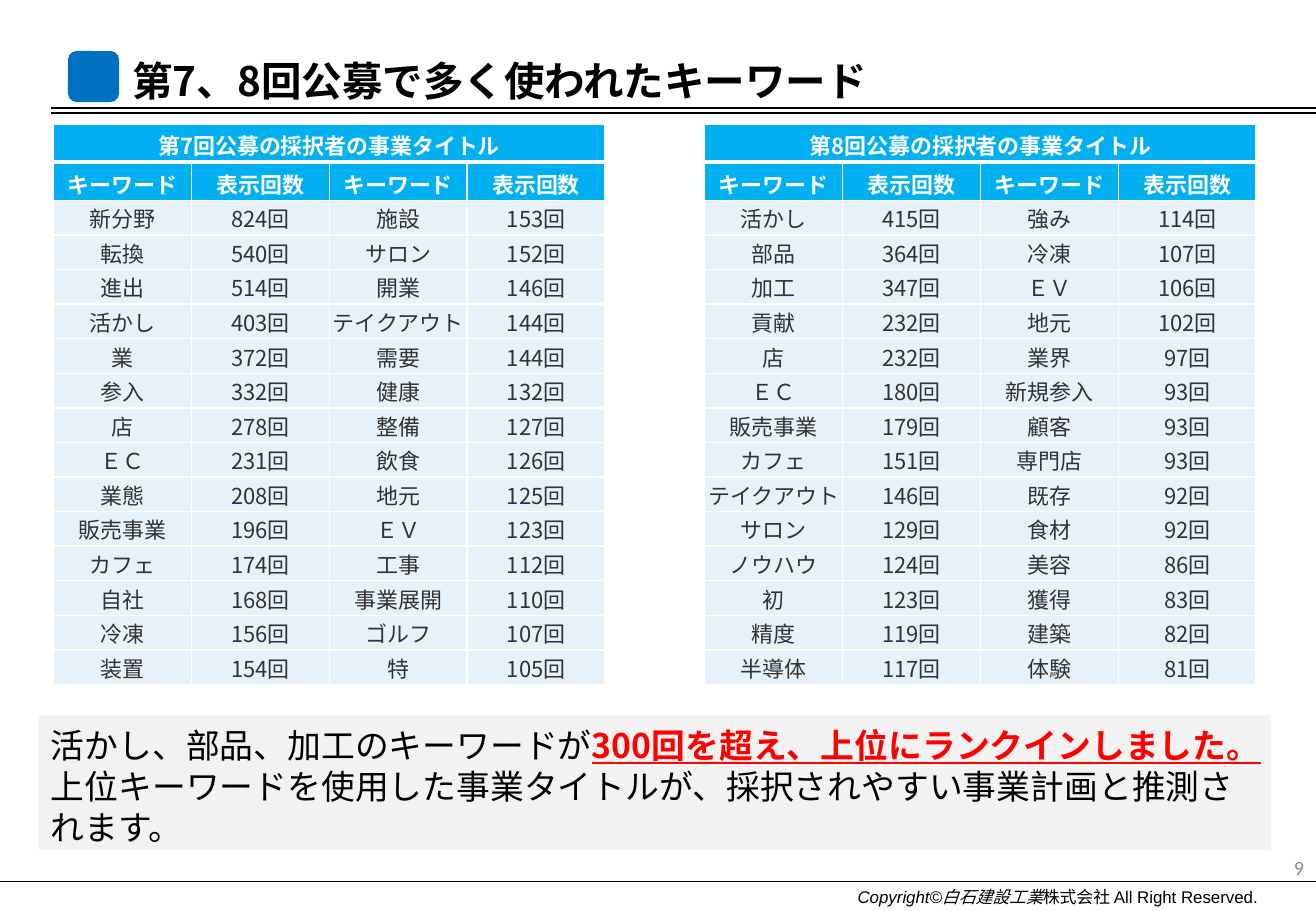
from lxml.etree import SubElement
from pptx import Presentation
from pptx.dml.color import RGBColor
from pptx.enum.shapes import MSO_CONNECTOR, MSO_SHAPE
from pptx.enum.text import MSO_ANCHOR, MSO_AUTO_SIZE, PP_ALIGN
from pptx.oxml import parse_xml
from pptx.oxml.ns import nsdecls, qn
from pptx.util import Pt

PX = 4572  # 200 px to the inch
SLIDE_W, SLIDE_H = 2166, 1500
GOTHIC = "Noto Sans CJK JP"
COLORS = {
    "black": "000000", "white": "FFFFFF", "marker": "0070C0", "header": "00B0F0",
    "body": "E7F1FA", "body_text": "333333", "summary": "F2F2F2",
    "emphasis": "FF0000", "page": "8C8C8C",
}

HEADINGS = ["キーワード", "表示回数"] * 2
ROUNDS = {
    "第7回公募の採択者の事業タイトル": [
        ("新分野", 824), ("転換", 540), ("進出", 514), ("活かし", 403), ("業", 372),
        ("参入", 332), ("店", 278), ("ＥＣ", 231), ("業態", 208), ("販売事業", 196),
        ("カフェ", 174), ("自社", 168), ("冷凍", 156), ("装置", 154),
        ("施設", 153), ("サロン", 152), ("開業", 146), ("テイクアウト", 144),
        ("需要", 144), ("健康", 132), ("整備", 127), ("飲食", 126), ("地元", 125),
        ("ＥＶ", 123), ("工事", 112), ("事業展開", 110), ("ゴルフ", 107), ("特", 105),
    ],
    "第8回公募の採択者の事業タイトル": [
        ("活かし", 415), ("部品", 364), ("加工", 347), ("貢献", 232), ("店", 232),
        ("ＥＣ", 180), ("販売事業", 179), ("カフェ", 151), ("テイクアウト", 146),
        ("サロン", 129), ("ノウハウ", 124), ("初", 123), ("精度", 119), ("半導体", 117),
        ("強み", 114), ("冷凍", 107), ("ＥＶ", 106), ("地元", 102), ("業界", 97),
        ("新規参入", 93), ("顧客", 93), ("専門店", 93), ("既存", 92), ("食材", 92),
        ("美容", 86), ("獲得", 83), ("建築", 82), ("体験", 81),
    ],
}
SUMMARY = [
    [("活かし、部品、加工のキーワードが", False),
     ("300回を超え、上位にランクインしました。", True)],
    [("上位キーワードを使用した事業タイトルが、採択されやすい事業計画と推測されます。", False)],
]


def color(name):
    return RGBColor.from_string(COLORS[name])


def emu(*lengths):
    return [length * PX for length in lengths]


def style(run, size, ink, latin=GOTHIC, bold=False, italic=False):
    font = run.font
    font.size, font.bold, font.italic, font.name = Pt(size), bold, italic, latin
    font.color.rgb = color(ink)
    SubElement(run._r.get_or_add_rPr(), qn("a:ea"), typeface=GOTHIC)


def add_rule(slide, x, y, width):
    rule = slide.shapes.add_connector(
        MSO_CONNECTOR.STRAIGHT, *emu(x, y, x + width, y))
    rule.line.color.rgb = color("black")
    rule.line.width = Pt(0.75)
    SubElement(rule._element.spPr, qn("a:effectLst"))


def add_block(slide, kind, box, fill):
    block = slide.shapes.add_shape(kind, *emu(*box))
    block.shadow.inherit = False
    block.fill.solid()
    block.fill.fore_color.rgb = color(fill)
    block.line.fill.background()
    return block


def add_heading(slide, x, y, width, height):
    # Double rule and marker
    for rule_y in (y + 96, y + 104):
        add_rule(slide, x, rule_y, width)
    add_block(slide, MSO_SHAPE.ROUNDED_RECTANGLE, (x + 28, y + 2, 84, 84), "marker")
    # Title
    title = slide.shapes.title
    title.left, title.top, title.width, title.height = emu(x + 114, y, 1400, height)
    frame = title.text_frame
    frame.text = "第7、8回公募で多く使われたキーワード"
    frame.auto_size = MSO_AUTO_SIZE.NONE
    frame.vertical_anchor = MSO_ANCHOR.MIDDLE
    frame.paragraphs[0].alignment = PP_ALIGN.LEFT
    style(frame.paragraphs[0].runs[0], 24, "black", bold=True)


def set_borders(cell, bottom):
    tc_pr = cell._tc.get_or_add_tcPr()
    for i, side in enumerate("LRTB"):
        width = Pt(bottom if side == "B" else 1)
        tc_pr.insert(i, parse_xml(
            f'<a:ln{side} {nsdecls("a")} w="{width}"><a:solidFill>'
            f'<a:srgbClr val="{COLORS["white"]}"/></a:solidFill></a:ln{side}>'))


def format_cell(cell, text, row, filled):
    is_header = row < 2
    cell.text = text
    cell.vertical_anchor = MSO_ANCHOR.MIDDLE
    cell.margin_left, cell.margin_right, cell.margin_top, cell.margin_bottom = emu(
        2, 2, 8 if is_header else 2, 0)
    if filled:
        cell.fill.solid()
        cell.fill.fore_color.rgb = color("header" if is_header else "body")
    else:
        cell.fill.background()
    set_borders(cell, 3 if row == 0 else 1)
    paragraph = cell.text_frame.paragraphs[0]
    paragraph.alignment = PP_ALIGN.CENTER
    if text:
        style(paragraph.runs[0], 13, "white" if is_header else "body_text", bold=is_header)
    else:
        SubElement(paragraph._p, qn("a:endParaRPr"), sz="800")


def keyword_rows():
    halves = []
    for name, counts in ROUNDS.items():
        half = len(counts) // 2
        pairs = zip(counts[:half], counts[half:])
        halves.append([[name, "", "", ""], HEADINGS] + [
            [left, f"{n}回", right, f"{m}回"] for (left, n), (right, m) in pairs])
    return [left + [""] + right for left, right in zip(*halves)]


def add_keyword_table(slide, x, y, width, height):
    rows, gap, header_height = keyword_rows(), 164, 63
    table = slide.shapes.add_table(len(rows), 9, *emu(x, y, width, height)).table
    table.first_row = table.horz_banding = False
    for i, column in enumerate(table.columns):
        column.width = PX * (gap if i == 4 else (width - gap) // 8)
    body_height = (height - 2 * header_height) // (len(rows) - 2)
    for r, texts in enumerate(rows):
        table.rows[r].height = PX * (header_height if r < 2 else body_height)
        for c, text in enumerate(texts):
            format_cell(table.cell(r, c), text, r, filled=c != 4)
    for first in (0, 5):
        table.cell(0, first).merge(table.cell(0, first + 3))


def add_summary(slide, *box):
    frame = add_block(slide, MSO_SHAPE.RECTANGLE, box, "summary").text_frame
    frame.word_wrap = True
    frame.vertical_anchor = MSO_ANCHOR.TOP
    frame.margin_left, frame.margin_right, frame.margin_top, frame.margin_bottom = emu(
        20, 16, 14, 6)
    for i, parts in enumerate(SUMMARY):
        paragraph = frame.add_paragraph() if i else frame.paragraphs[0]
        paragraph.alignment = PP_ALIGN.LEFT
        paragraph.line_spacing = Pt(24.3)
        for text, emphasized in parts:
            run = paragraph.add_run()
            run.text = text
            style(run, 20, "emphasis" if emphasized else "black", bold=emphasized)
            run.font.underline = emphasized


def add_label(slide, box, align):
    frame = slide.shapes.add_textbox(*emu(*box)).text_frame
    frame.word_wrap = True
    frame.vertical_anchor = MSO_ANCHOR.MIDDLE
    frame.paragraphs[0].alignment = align
    return frame.paragraphs[0]


def add_footer(slide, x, y, width, height):
    add_rule(slide, x, y + 64, width)
    # Page number
    page = add_label(slide, (width - 488, y, 488, 80), PP_ALIGN.RIGHT)
    page.text = "9"
    style(page.runs[0], 12, "page", latin="Calibri")
    # Copyright
    copyright_line = add_label(
        slide, (x + 1392, y + 62, width - 1392, height - 58), PP_ALIGN.LEFT)
    for text, italic in (("Copyright©白石建設工業", True),
                         ("株式会社 All Right Reserved.", False)):
        run = copyright_line.add_run()
        run.text = text
        style(run, 10, "black", latin="Arial", italic=italic)


def main():
    prs = Presentation()
    prs.slide_width, prs.slide_height = emu(SLIDE_W, SLIDE_H)
    slide = prs.slides.add_slide(prs.slide_layouts[5])
    add_heading(slide, 84, 82, SLIDE_W - 84, 100)
    add_keyword_table(slide, 88, 204, 1980, 924)
    add_summary(slide, 64, 1178, 2028, 222)
    add_footer(slide, 0, 1388, SLIDE_W, SLIDE_H - 1388)
    prs.save("out.pptx")


if __name__ == "__main__":
    main()
